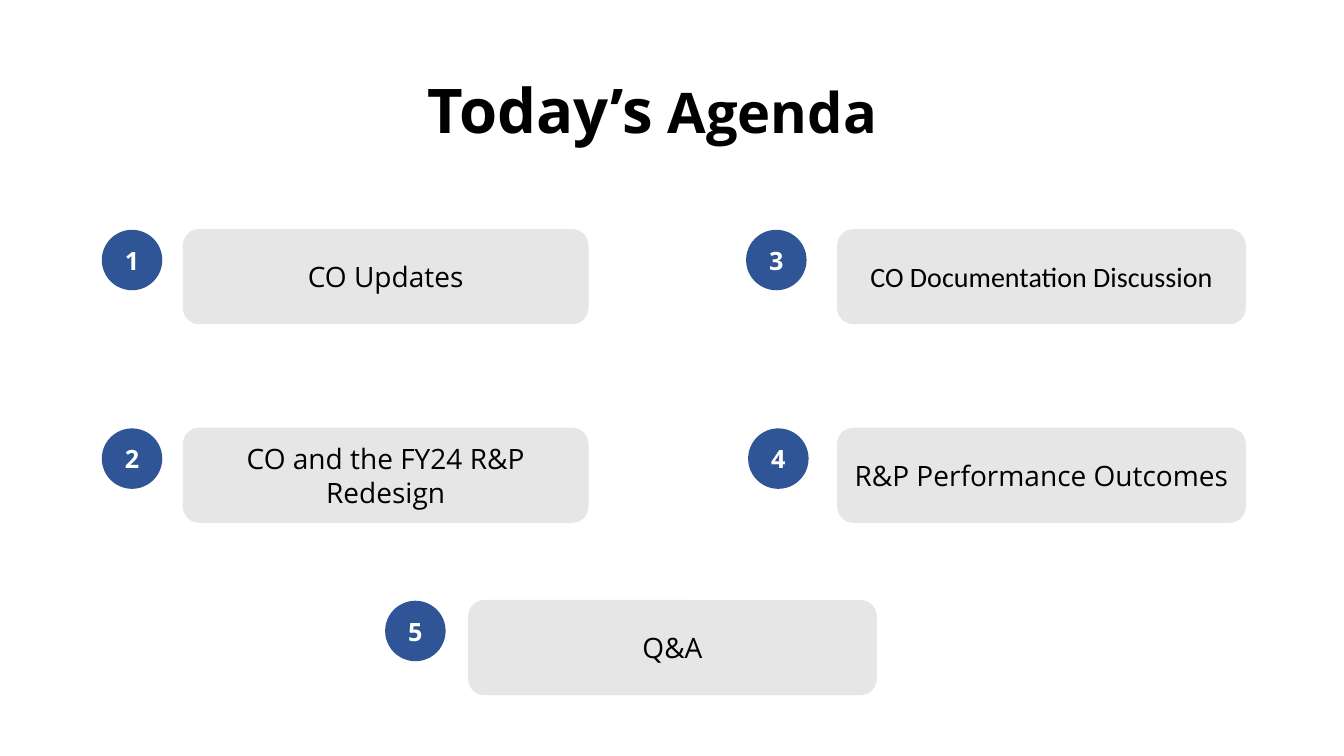
from pptx import Presentation
from pptx.dml.color import RGBColor
from pptx.enum.shapes import MSO_SHAPE as Shape
from pptx.enum.text import MSO_ANCHOR as Anchor, MSO_AUTO_SIZE as AutoSize, PP_ALIGN as Align
from pptx.util import Inches, Pt

# Content
TITLE = [("Today’s", 44), (" Agenda", 40)]
# Agenda item, font, circle left, box left, top, box width
AGENDA = [
    ("CO Updates", "Open Sans", 1.01, 1.82, 2.28, 4.01),
    ("CO and the FY24 R&P Redesign", "Open Sans", 1.01, 1.82, 4.25, 4.01),
    ("CO Documentation Discussion", "Calibri", 7.4, 8.31, 2.28, 4.04),
    ("R&P Performance Outcomes", "Open Sans", 7.42, 8.31, 4.25, 4.04),
    ("Q&A", "Open Sans", 3.82, 4.65, 5.96, 4.04),
]
CIRCLE_SIZE, BOX_HEIGHT = 0.6, 0.93
BLUE, GREY, BLACK, WHITE = "2F5597", "E7E6E6", "000000", "FFFFFF"


def color(value):
    return RGBColor.from_string(value)


def add_text(shape, text, size=20, font="Open Sans", fill=BLACK, bold=False):
    frame = shape.text_frame
    frame.word_wrap = True
    frame.auto_size = AutoSize.NONE
    frame.vertical_anchor = Anchor.MIDDLE
    paragraph = frame.paragraphs[0]
    paragraph.alignment = Align.CENTER
    run = paragraph.add_run()
    run.text = text
    run.font.name = font
    run.font.size = Pt(size)
    run.font.bold = bold
    run.font.color.rgb = color(fill)


def add_shape(slide, kind, left, top, width, height, fill):
    shape = slide.shapes.add_shape(
        kind, Inches(left), Inches(top), Inches(width), Inches(height))
    shape.shadow.inherit = False
    shape.fill.solid()
    shape.fill.fore_color.rgb = color(fill)
    return shape


presentation = Presentation()
presentation.slide_width = Inches(13.33)
presentation.slide_height = Inches(7.5)
slide = presentation.slides.add_slide(presentation.slide_layouts[5])

# Title
title = slide.shapes.title
title.left, title.top = Inches(2.83), Inches(0.66)
title.width, title.height = Inches(7.28), Inches(0.84)
for text, size in TITLE:
    add_text(title, text, size=size, bold=True)

# Numbered agenda items
for number, (item, font, circle_left, box_left, top, width) in enumerate(AGENDA, start=1):
    circle = add_shape(slide, Shape.OVAL, circle_left, top, CIRCLE_SIZE, CIRCLE_SIZE, BLUE)
    circle.line.fill.background()
    add_text(circle, str(number), size=18, fill=WHITE, bold=True)

    box = add_shape(slide, Shape.ROUNDED_RECTANGLE, box_left, top, width, BOX_HEIGHT, GREY)
    box.line.color.rgb = color(GREY)
    box.line.width = Pt(1)
    add_text(box, item, font=font)

presentation.save("out.pptx")
